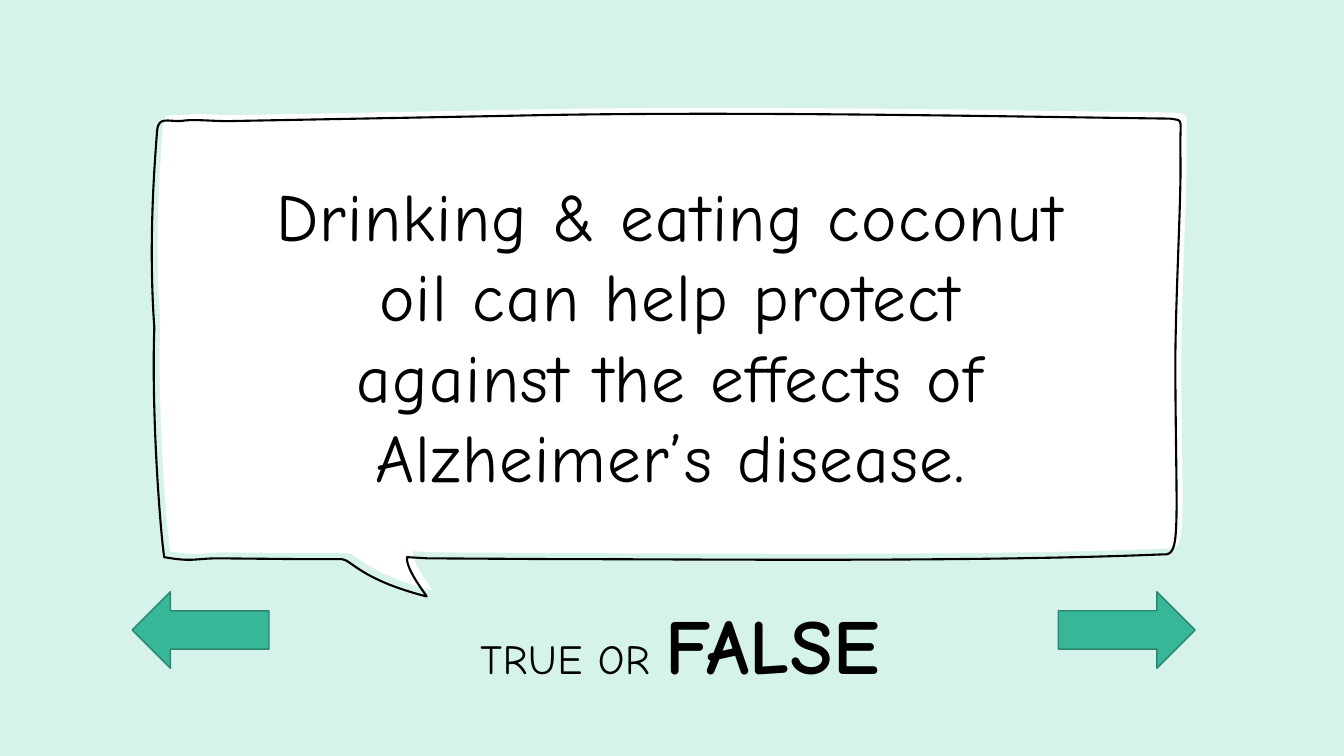
"""Build a true-or-false quiz slide with a hand-drawn speech bubble."""
from dataclasses import dataclass

from pptx import Presentation
from pptx.dml.color import RGBColor
from pptx.enum import shapes, text
from pptx.oxml import ns, xmlchemy
from pptx.util import Cm, Pt


@dataclass(frozen=True)
class Theme:
    font: str = "Comic Neue"
    background: str = "D5F2EB"
    paper: str = "FFFFFF"
    ink: str = "000000"
    arrow: str = "38B698"
    arrow_edge: str = "298770"
    statement_size: float = 48
    choice_size: float = 29.6
    answer_size: float = 55.5


THEME = Theme()
BUBBLE_START = (4.72, 2.9)
BUBBLE_SEGMENTS = (
    ((4.39, 2.92), (4.14, 2.77), (4.11, 3.15)),
    ((4.04, 4.04), (3.89, 6.02), (4.04, 8.1)),
    ((3.96, 10.49), (4.22, 13.49), (4.29, 13.89)),
    ((5, 14.02), (5.08, 13.92), (5.66, 13.92)),
    ((7.72, 13.94),),
    ((8.76, 13.94),),
    ((8.99, 13.94), (9.22, 14.45), (10.9, 14.88)),
    ((10.97, 14.94), (10.36, 14.2), (10.41, 13.89)),
    ((10.92, 13.92),),
    ((14.2, 13.94),),
    ((17.78, 13.94), (24.64, 14.02), (29.46, 13.82)),
    ((29.92, 13.87), (29.79, 13.23), (29.77, 9.12)),
    ((29.77, 7.42), (29.92, 4.88), (29.9, 3.84)),
    ((29.87, 2.79), (30.02, 2.9), (29.64, 2.84)),
    ((25.58, 2.79), (18.42, 2.64), (12.93, 2.77)),
    ((6.05, 2.9),),
    ((5.61, 2.92), (5.03, 2.84), BUBBLE_START),
)


def style_shape(shape, fill=None, line=None, width=1):
    shape.shadow.inherit = False
    if fill:
        shape.fill.solid()
        shape.fill.fore_color.rgb = RGBColor.from_string(fill)
    else:
        shape.fill.background()
    if line:
        shape.line.color.rgb = RGBColor.from_string(line)
        shape.line.width = Pt(width)
    else:
        shape.line.fill.background()


def curve_segments(shape, segments):
    lines = iter(list(shape._element.iter(ns.qn("a:lnTo"))))
    for segment in segments:
        group = [next(lines) for _ in segment]
        if len(group) == 3:
            curve = xmlchemy.OxmlElement("a:cubicBezTo")
            group[0].addprevious(curve)
            for line in group:
                curve.append(line[0])
                line.getparent().remove(line)


def add_bubble(slide, shift=0, **style):
    points = [
        (Cm(x - shift), Cm(y + shift))
        for segment in ((BUBBLE_START,), *BUBBLE_SEGMENTS)
        for x, y in segment
    ]
    builder = slide.shapes.build_freeform(*points[0])
    builder.add_line_segments(points[1:], close=True)
    shape = builder.convert_to_shape()
    curve_segments(shape, BUBBLE_SEGMENTS)
    style_shape(shape, **style)


def add_arrow(slide, left, rotation=0):
    shape = slide.shapes.add_shape(
        shapes.MSO_SHAPE.RIGHT_ARROW, Cm(left), Cm(14.91), Cm(3.45), Cm(1.93)
    )
    shape.rotation = rotation
    style_shape(shape, fill=THEME.arrow, line=THEME.arrow_edge)


def add_text_box(slide, left, top, width, height, anchor=text.MSO_ANCHOR.TOP):
    shape = slide.shapes.add_textbox(Cm(left), Cm(top), Cm(width), Cm(height))
    shape.text_frame.word_wrap = True
    shape.text_frame.vertical_anchor = anchor
    return shape.text_frame.paragraphs[0]


def add_run(paragraph, words, size, bold=False, spacing=0):
    run = paragraph.add_run()
    run.text = words
    run.font.name = THEME.font
    run.font.size = Pt(size)
    run.font.bold = bold
    run.font.color.rgb = RGBColor.from_string(THEME.ink)
    run.font._element.set("spc", str(int(spacing * 100)))


def main():
    presentation = Presentation()
    presentation.slide_width, presentation.slide_height = Cm(33.87), Cm(19.05)
    slide = presentation.slides.add_slide(presentation.slide_layouts[6])
    slide.background.fill.solid()
    slide.background.fill.fore_color.rgb = RGBColor.from_string(THEME.background)

    add_bubble(slide, fill=THEME.paper)
    add_bubble(slide, shift=0.15, line=THEME.ink, width=1.5)

    statement = add_text_box(slide, 6.41, 4.9, 21, 7.09, anchor=text.MSO_ANCHOR.MIDDLE)
    statement.alignment = text.PP_ALIGN.CENTER
    add_run(
        statement,
        "Drinking & eating coconut oil can help protect against the effects of Alzheimer’s disease.",
        THEME.statement_size,
        spacing=1,
    )

    choice = add_text_box(slide, 11.86, 15.18, 18.26, 2.46)
    choice.line_spacing = 0.9
    choice.space_before = Pt(10)
    add_run(choice, "TRUE OR ", THEME.choice_size, spacing=0.5)
    add_run(choice, "FALSE", THEME.answer_size, bold=True, spacing=0.5)

    add_arrow(slide, 3.33, rotation=180)
    add_arrow(slide, 26.67)
    presentation.save("out.pptx")


if __name__ == "__main__":
    main()
